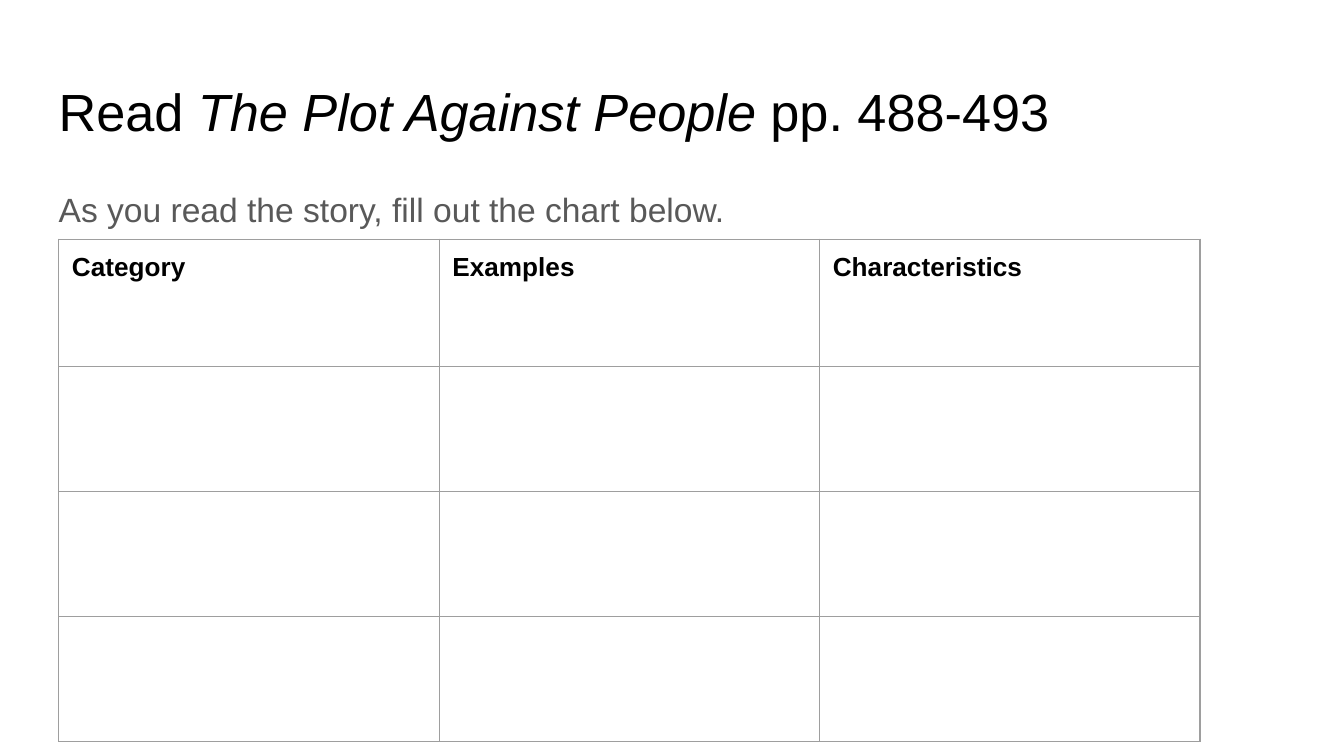
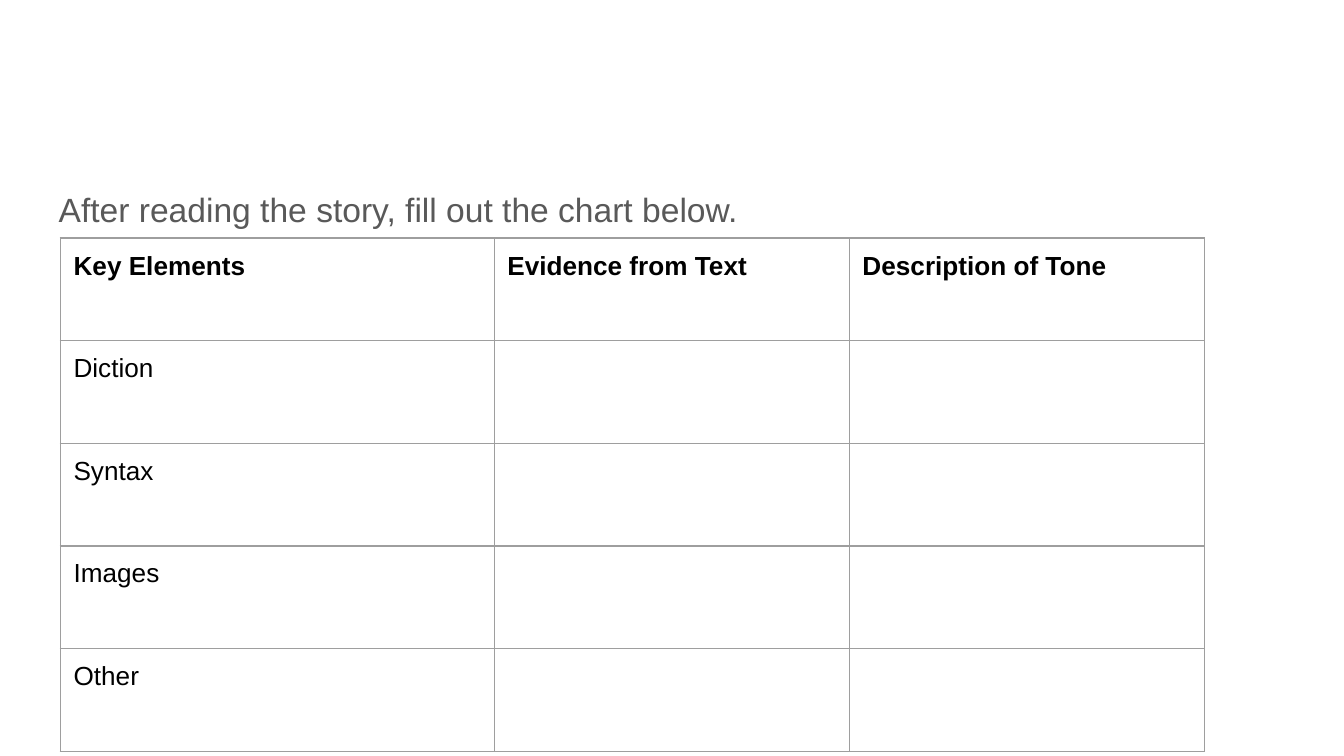
from dataclasses import dataclass

from lxml.etree import SubElement
from pptx import Presentation
from pptx.dml.color import RGBColor as RGB
from pptx.oxml.ns import qn
from pptx.util import Cm, Pt


@dataclass(frozen=True)
class Theme:
    font: str = "Arial"
    ink: str = "000000"
    muted: str = "595959"
    grid: str = "9E9E9E"
    title_size: int = 28
    body_size: int = 18
    cell_size: int = 14
    grid_width: float = 0.75


theme = Theme()
INSET = Cm(0.25)
TEXT_LEFT, TEXT_WIDTH = Cm(0.86), Cm(23.67)


def write(tf, text, size, color=theme.ink, bold=False, spacing=None, after=None):
    """Fill a text frame; parts between asterisks are italic."""
    tf.word_wrap = True
    tf.margin_left = tf.margin_right = tf.margin_top = tf.margin_bottom = INSET
    p = tf.paragraphs[0]
    p.line_spacing = spacing
    p.space_after = after
    for i, part in enumerate(text.split("*")):
        r = p.add_run()
        r.text = part
        r.font.name = theme.font
        r.font.size = Pt(size)
        r.font.bold = bold
        r.font.italic = i % 2 == 1
        r.font.color.rgb = RGB.from_string(color)


def outline(cell):
    """Draw a thin grid line on all four sides of a cell."""
    tc_pr = cell._tc.get_or_add_tcPr()
    for side in ("lnL", "lnR", "lnT", "lnB"):
        ln = SubElement(tc_pr, qn(f"a:{side}"), w=str(Pt(theme.grid_width)))
        fill = SubElement(ln, qn("a:solidFill"))
        SubElement(fill, qn("a:srgbClr"), val=theme.grid)


worksheets = [
    {
        "title": "Read *The Plot Against People* pp. 488-493",
        "prompt": "As you read the story, fill out the chart below.",
        "prompt_height": 7.32,
        "corner": (1.11, 4.52),
        "columns": (7.19, 7.19, 7.19),
        "rows": (2.41, 2.36, 2.36, 2.36),
        "headers": ("Category", "Examples", "Characteristics"),
        "labels": (),
    },
    {
        "title": None,
        "prompt": "After reading the story, fill out the chart below.",
        "prompt_height": 9.5,
        "corner": (1.14, 4.5),
        "columns": (8.2, 6.71, 6.71),
        "rows": (1.94,) * 5,
        "headers": ("Key Elements", "Evidence from Text", "Description of Tone"),
        "labels": ("Diction", "Syntax", "Images", "Other"),
    },
]

prs = Presentation()
prs.slide_width, prs.slide_height = Cm(25.4), Cm(14.29)

for sheet in worksheets:
    s = prs.slides.add_slide(prs.slide_layouts[6])

    if sheet["title"]:
        sp = s.shapes.add_textbox(TEXT_LEFT, Cm(1.24), TEXT_WIDTH, Cm(1.6))
        write(sp.text_frame, sheet["title"], theme.title_size)

    sp = s.shapes.add_textbox(TEXT_LEFT, Cm(3.2), TEXT_WIDTH, Cm(sheet["prompt_height"]))
    write(sp.text_frame, sheet["prompt"], theme.body_size, color=theme.muted,
          spacing=1.15, after=Pt(16))

    left, top = sheet["corner"]
    columns, rows = sheet["columns"], sheet["rows"]
    table = s.shapes.add_table(len(rows), len(columns), Cm(left), Cm(top),
                               Cm(sum(columns)), Cm(sum(rows))).table
    table.first_row = table.horz_banding = False
    for column, width in zip(table.columns, columns):
        column.width = Cm(width)
    for row, height in zip(table.rows, rows):
        row.height = Cm(height)

    for cell in table.iter_cells():
        cell.margin_left = cell.margin_right = INSET
        cell.margin_top = cell.margin_bottom = INSET
        outline(cell)
        cell.fill.background()
    for i, header in enumerate(sheet["headers"]):
        write(table.cell(0, i).text_frame, header, theme.cell_size, bold=True)
    for i, label in enumerate(sheet["labels"], start=1):
        write(table.cell(i, 0).text_frame, label, theme.cell_size)

prs.save("out.pptx")
